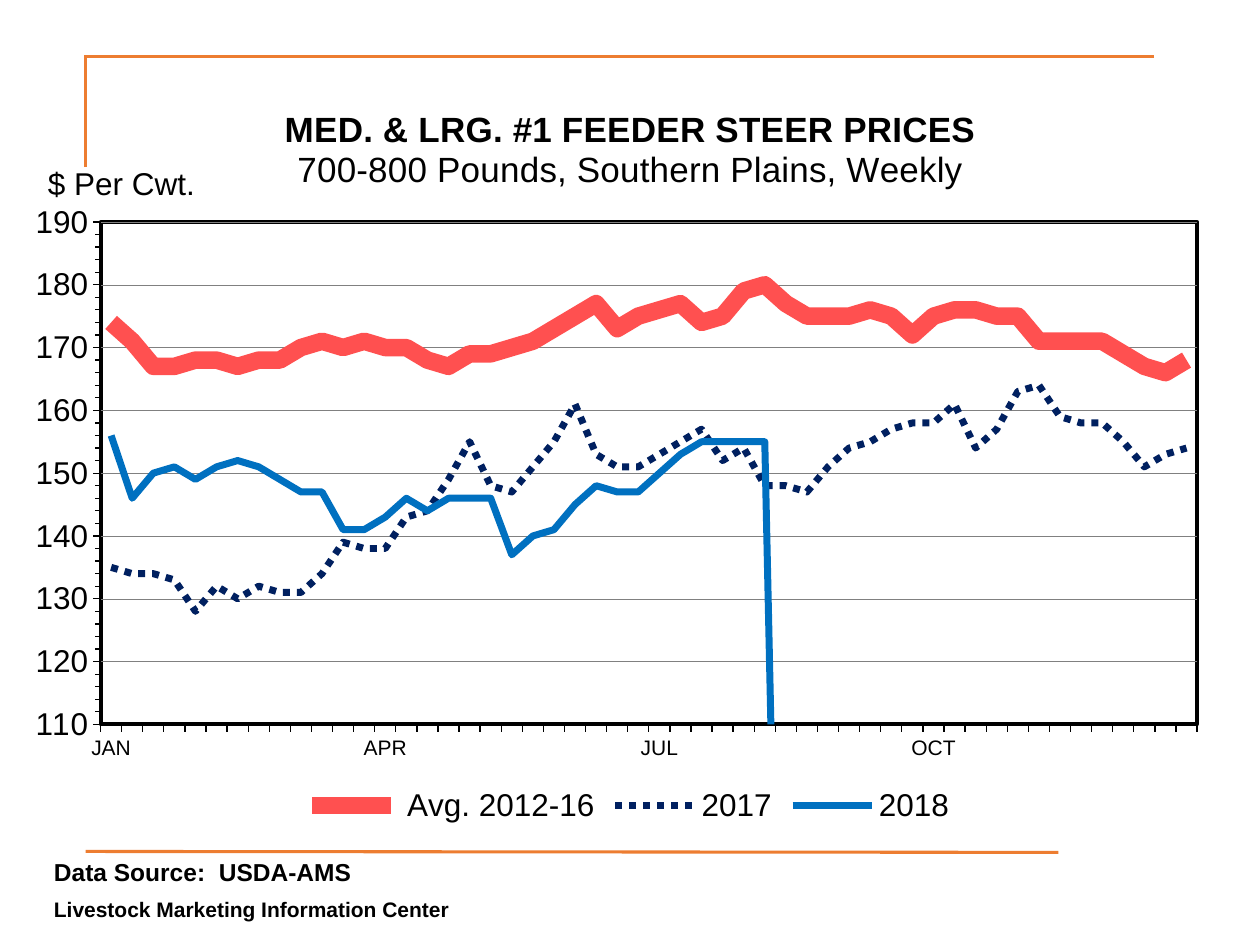
from lxml import etree
from pptx import Presentation, util as u
from pptx.chart.data import CategoryChartData
from pptx.dml.color import RGBColor
from pptx.enum import chart as ch, dml
from pptx.oxml import parse_xml
from pptx.oxml.ns import nsdecls, qn

WEEKS = 52
QUARTERS = {0: "JAN", 13: "APR", 26: "JUL", 39: "OCT"}
AVERAGE = [174, 171, 167, 167, 168, 168, 167, 168, 168, 170, 171, 170, 171,
           170, 170, 168, 167, 169, 169, 170, 171, 173, 175, 177, 173, 175,
           176, 177, 174, 175, 179, 180, 177, 175, 175, 175, 176, 175, 172,
           175, 176, 176, 175, 175, 171, 171, 171, 171, 169, 167, 166, 168]
PRICES_2017 = [135, 134, 134, 133, 128, 132, 130, 132, 131, 131, 134, 139, 138,
               138, 143, 144, 149, 155, 148, 147, 151, 155, 161, 153, 151, 151,
               153, 155, 157, 152, 154, 148, 148, 147, 151, 154, 155, 157, 158,
               158, 161, 154, 157, 163, 164, 159, 158, 158, 155, 151, 153, 154]
PRICES_2018 = [156, 146, 150, 151, 149, 151, 152, 151, 149, 147, 147, 141, 141,
               143, 146, 144, 146, 146, 146, 137, 140, 141, 145, 148, 147, 147,
               150, 153, 155, 155, 155, 155]
# name, values, colour, width in points, dash
SERIES = [
    (" Avg. 2012-16", AVERAGE, "FF5050", 10, None),
    ("2017", PRICES_2017, "002060", 4, dml.MSO_LINE.ROUND_DOT),
    ("2018", PRICES_2018 + [None] * (WEEKS - len(PRICES_2018)), "0070C0", 4, None),
]


def rgb(code):
    return RGBColor.from_string(code)


def apply(target, values):
    for name, value in values.items():
        setattr(target, name, value)


def set_line(line, code, width, dash=None):
    line.color.rgb = rgb(code)
    line.width = u.Pt(width)
    if dash:
        line.dash_style = dash


def place(title, x, y):
    """Fix a chart title or axis title at shares of the chart's size."""
    element = title._element
    for old in element.findall(qn("c:layout")):
        element.remove(old)
    layout = parse_xml(
        f'<c:layout {nsdecls("c")}><c:manualLayout><c:xMode val="edge"/>'
        f'<c:yMode val="edge"/><c:x val="{x}"/><c:y val="{y}"/>'
        '</c:manualLayout></c:layout>')
    element.find(qn("c:tx")).addnext(layout)


class PriceSlide:
    FONT, INK, ACCENT = "Arial", "000000", "ED7D31"

    def __init__(self, deck):
        self.width, self.height = deck.slide_width, deck.slide_height
        self.slide = deck.slides.add_slide(deck.slide_layouts[6])

    def at(self, x, y):
        """Turn shares of the slide's size into lengths."""
        return round(x * self.width), round(y * self.height)

    def style(self, font, size, bold=False):
        apply(font, {"name": self.FONT, "size": u.Pt(size), "bold": bold})
        font.color.rgb = rgb(self.INK)

    def rule(self, start, end):
        line = self.slide.shapes.add_connector(1, *self.at(*start), *self.at(*end))
        set_line(line.line, self.ACCENT, 1.75)
        etree.SubElement(line._element.spPr, qn("a:effectLst"))

    def notes(self, corner, size, lines):
        box = self.slide.shapes.add_textbox(*self.at(*corner), *self.at(*size))
        frame = box.text_frame
        frame.word_wrap = True
        for i, (words, points) in enumerate(lines):
            para = frame.add_paragraph() if i else frame.paragraphs[0]
            if i:
                para.space_before = u.Pt(points / 2)
            run = para.add_run()
            run.text = words
            self.style(run.font, points, bold=True)

    def price_chart(self, corner, size):
        data = CategoryChartData()
        data.categories = [QUARTERS.get(week, "") for week in range(WEEKS)]
        for name, values, *_ in SERIES:
            data.add_series(name, values)
        chart = self.slide.shapes.add_chart(
            ch.XL_CHART_TYPE.LINE, *self.at(*corner), *self.at(*size), data).chart
        # The week labels take this size; all other text sets its own
        self.style(chart.font, 12)
        for series, (_, _, code, width, dash) in zip(chart.plots[0].series, SERIES):
            series.smooth = False
            series.marker.style = ch.XL_MARKER_STYLE.NONE
            set_line(series.format.line, code, width, dash)
        chart.plots[0].vary_by_categories = False
        chart.has_legend = True
        apply(chart.legend, {"position": ch.XL_LEGEND_POSITION.BOTTOM,
                             "include_in_layout": False})
        self.style(chart.legend.font, 18)
        self.chart_title(chart)
        self.axes(chart)
        self.frame_plot(chart)

    def chart_title(self, chart):
        frame = chart.chart_title.text_frame
        frame.text = ("MED. & LRG. #1 FEEDER STEER PRICES\n"
                      "700-800 Pounds, Southern Plains, Weekly")
        for para, bold in zip(frame.paragraphs, (True, False)):
            self.style(para.runs[0].font, 20, bold)
        place(chart.chart_title, 0.213, 0.028)

    def axes(self, chart):
        weeks, price = chart.category_axis, chart.value_axis
        outside = ch.XL_TICK_MARK.OUTSIDE
        apply(weeks, {"major_tick_mark": outside, "has_major_gridlines": False})
        apply(price, {"minimum_scale": 110, "maximum_scale": 190, "major_unit": 10,
                      "minor_unit": 2, "major_tick_mark": outside,
                      "minor_tick_mark": outside, "has_major_gridlines": True,
                      "has_title": True})
        self.style(price.tick_labels.font, 18)
        for axis in (weeks, price):
            set_line(axis.format.line, self.INK, 0.75)
        set_line(price.major_gridlines.format.line, "808080", 0.25)
        # Text properties on this axis would break its labels letter by letter
        for props in weeks._element.findall(qn("c:txPr")):
            weeks._element.remove(props)
        no_multi = weeks._element.find(qn("c:noMultiLvlLbl"))
        for tag in ("tickLblSkip", "tickMarkSkip"):
            no_multi.addprevious(parse_xml(f'<c:{tag} {nsdecls("c")} val="1"/>'))
        unit = price.axis_title.text_frame
        unit.text = "$ Per Cwt."
        self.style(unit.paragraphs[0].runs[0].font, 18)
        unit._txBody.find(qn("a:bodyPr")).set("rot", "0")
        place(price.axis_title, 0.017, 0.098)

    def frame_plot(self, chart):
        """Fix the inner plot area, give it a heavy border, clear the chart fill."""
        space = chart._chartSpace
        plot = space.chart.plotArea
        for old in plot.findall(qn("c:layout")):
            plot.remove(old)
        sides = "".join(f'<c:{side} val="{share}"/>' for side, share in
                        zip("xywh", (0.065, 0.185, 0.9, 0.674)))
        plot.insert(0, parse_xml(
            f'<c:layout {nsdecls("c")}><c:manualLayout><c:layoutTarget val="inner"/>'
            f'<c:xMode val="edge"/><c:yMode val="edge"/>{sides}'
            '</c:manualLayout></c:layout>'))
        plot.append(parse_xml(
            f'<c:spPr {nsdecls("c", "a")}><a:solidFill><a:srgbClr val="FFFFFF"/>'
            f'</a:solidFill><a:ln w="{u.Pt(2.25)}"><a:solidFill>'
            f'<a:srgbClr val="{self.INK}"/></a:solidFill></a:ln></c:spPr>'))
        space.chart.addnext(parse_xml(
            f'<c:spPr {nsdecls("c", "a")}><a:noFill/><a:ln><a:noFill/></a:ln></c:spPr>'))
        # Weeks without a price drop to zero
        space.chart.find(qn("c:dispBlanksAs")).set("val", "zero")


def main():
    deck = Presentation()
    deck.slide_width, deck.slide_height = u.Inches(10), u.Inches(7.5)
    prices = PriceSlide(deck)
    for start, end in (((0.068, 0.177), (0.068, 0.06)),
                       ((0.916, 0.06), (0.067, 0.06)),
                       ((0.84, 0.902), (0.068, 0.901))):
        prices.rule(start, end)
    prices.price_chart((0.017, 0.089), (0.967, 0.789))
    prices.notes((0.033, 0.9), (0.517, 0.085),
                 [("Data Source:  USDA-AMS", 14),
                  ("Livestock Marketing Information Center", 12)])
    deck.save("out.pptx")


if __name__ == "__main__":
    main()
